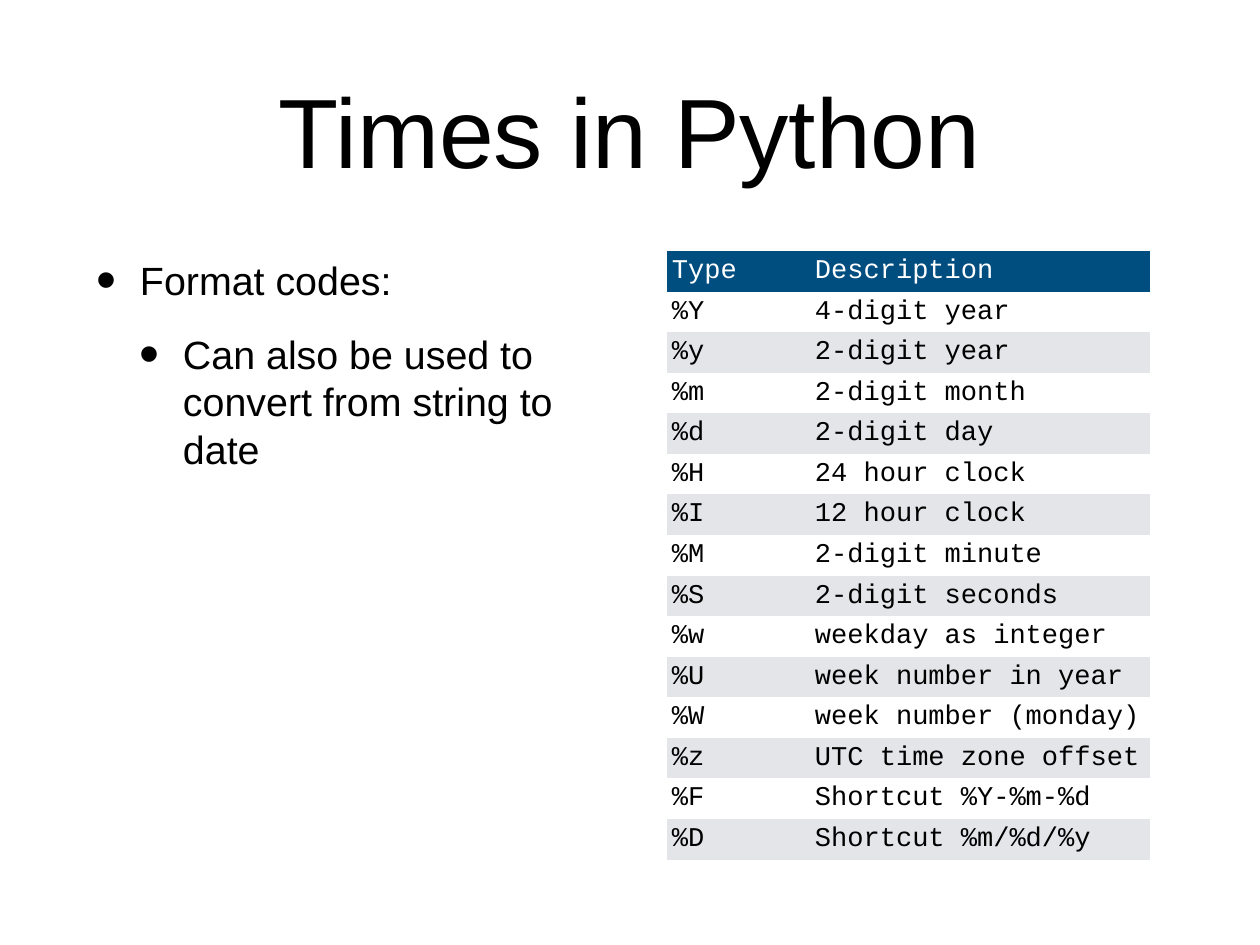
from pptx import Presentation
from pptx.dml.color import RGBColor
from pptx.enum.text import MSO_ANCHOR, PP_ALIGN
from pptx.oxml.ns import qn
from pptx.oxml.xmlchemy import OxmlElement
from pptx.util import Emu, Pt

EMU_PER_PX = 10320
COLORS = {
    "text": "000000",
    "header": "004D80",
    "header_text": "FFFFFF",
    "plain": "FFFFFF",
    "band": "E3E5E8",
}
NO_TABLE_STYLE = "{2D5ABB26-0587-4C30-8999-92F81FD0307C}"

FORMAT_CODES = [
    ("Type", "Description"),
    ("%Y", "4-digit year"),
    ("%y", "2-digit year"),
    ("%m", "2-digit month"),
    ("%d", "2-digit day"),
    ("%H", "24 hour clock"),
    ("%I", "12 hour clock"),
    ("%M", "2-digit minute"),
    ("%S", "2-digit seconds"),
    ("%w", "weekday as integer"),
    ("%U", "week number in year"),
    ("%W", "week number (monday)"),
    ("%z", "UTC time zone offset"),
    ("%F", "Shortcut %Y-%m-%d"),
    ("%D", "Shortcut %m/%d/%y"),
]


def px(count):
    return Emu(count * EMU_PER_PX)


class SlideBuilder:
    text_font = "Arial"
    code_font = "Courier New"
    inset = px(5)
    cell_inset = px(4)
    indent = px(43)

    def __init__(self, slide):
        self.slide = slide

    def set_margins(self, holder, vertical):
        holder.margin_left = holder.margin_right = self.inset
        holder.margin_top = holder.margin_bottom = vertical

    def add_run(self, para, text, size, font, color="text"):
        span = para.add_run()
        span.text = text
        span.font.size = Pt(size)
        span.font.name = font
        span.font.color.rgb = RGBColor.from_string(COLORS[color])

    def add_frame(self, left, top, width, height):
        box = self.slide.shapes.add_textbox(px(left), px(top), px(width), px(height))
        frame = box.text_frame
        frame.word_wrap = True
        self.set_margins(frame, self.inset)
        return frame

    def add_title(self, text, left, top, width, height):
        frame = self.add_frame(left, top, width, height)
        frame.vertical_anchor = MSO_ANCHOR.MIDDLE
        para = frame.paragraphs[0]
        para.alignment = PP_ALIGN.CENTER
        self.add_run(para, text, 80, self.text_font)

    def add_bullets(self, texts, left, top, width, height):
        frame = self.add_frame(left, top, width, height)
        for level, text in enumerate(texts):
            para = frame.add_paragraph() if level else frame.paragraphs[0]
            para.level = level
            para.space_before = Pt(22)
            self.add_run(para, text, 32, self.text_font)
            self.add_bullet(para, level)

    def add_bullet(self, para, level):
        properties = para._p.get_or_add_pPr()
        properties.set("marL", str(self.indent * (level + 1)))
        properties.set("indent", str(-self.indent))
        for tag, name, value in (
            ("a:buSzPct", "val", "145000"),
            ("a:buFont", "typeface", self.text_font),
            ("a:buChar", "char", "•"),
        ):
            part = OxmlElement(tag)
            part.set(name, value)
            properties.append(part)

    def add_table(self, rows, left, top, widths, height):
        shape = self.slide.shapes.add_table(
            len(rows), len(widths), px(left), px(top), px(sum(widths)), px(height)
        )
        shape._element.find(".//" + qn("a:tableStyleId")).text = NO_TABLE_STYLE
        table = shape.table
        table.horz_banding = False
        for column, width in zip(table.columns, widths):
            column.width = px(width)
        for row_index, texts in enumerate(rows):
            table.rows[row_index].height = px(height) // len(rows)
            fill = ("band", "plain")[row_index % 2] if row_index else "header"
            color = "text" if row_index else "header_text"
            for cell, text in zip(table.rows[row_index].cells, texts):
                self.fill_cell(cell, text, fill, color)

    def fill_cell(self, cell, text, fill, color):
        cell.fill.solid()
        cell.fill.fore_color.rgb = RGBColor.from_string(COLORS[fill])
        cell.vertical_anchor = MSO_ANCHOR.MIDDLE
        self.set_margins(cell, self.cell_inset)
        self.add_run(cell.text_frame.paragraphs[0], text, 22, self.code_font, color)


def main():
    deck = Presentation()
    deck.slide_width = px(1260)
    deck.slide_height = px(945)
    page = SlideBuilder(deck.slides.add_slide(deck.slide_layouts[6]))
    page.add_title("Times in Python", 92, 25, 1076, 209)
    page.add_bullets(
        ["Format codes:", "Can also be used to convert from string to date"],
        92, 251, 538, 610,
    )
    page.add_table(FORMAT_CODES, 667, 251, (143, 340), 609)
    deck.save("out.pptx")


if __name__ == "__main__":
    main()
